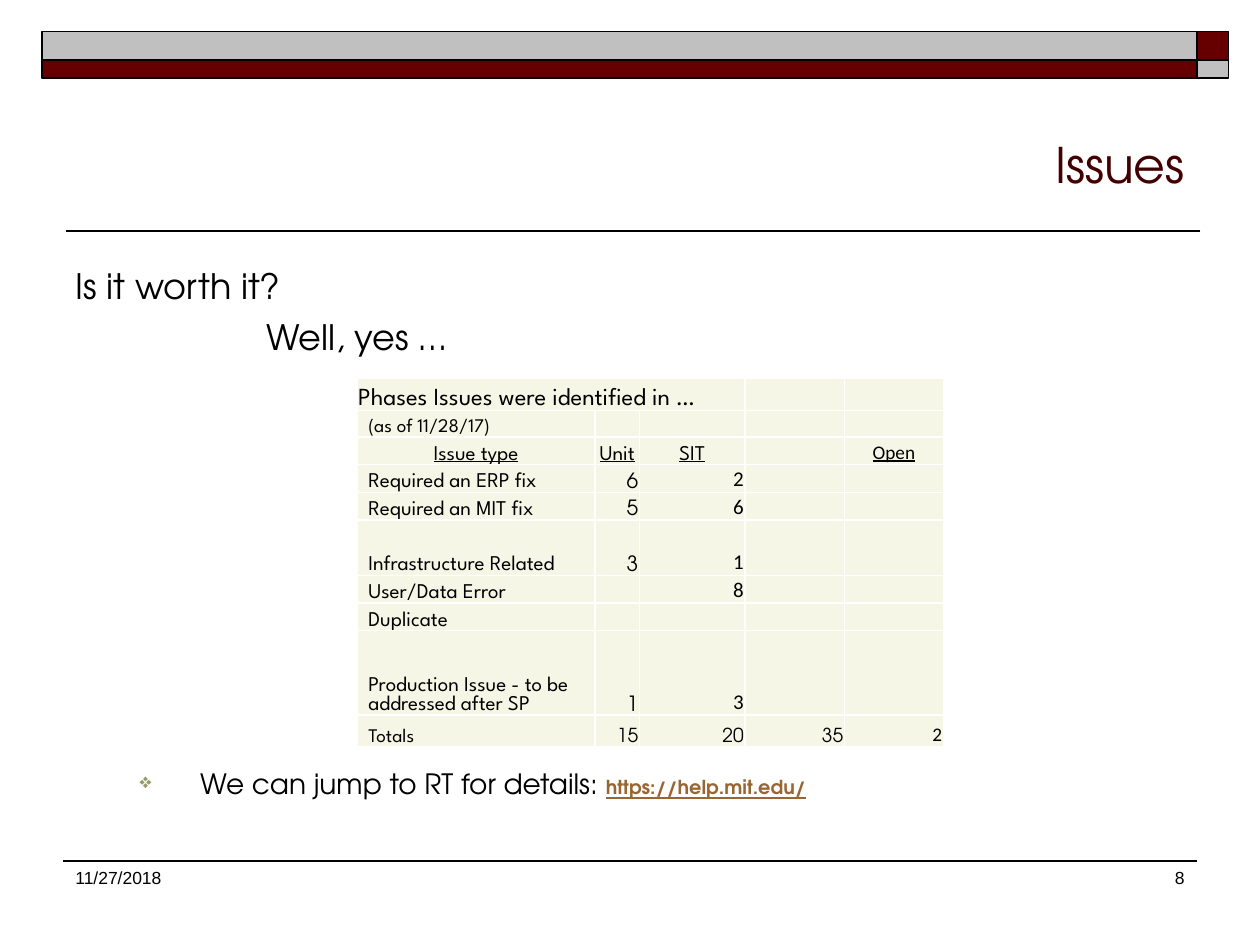
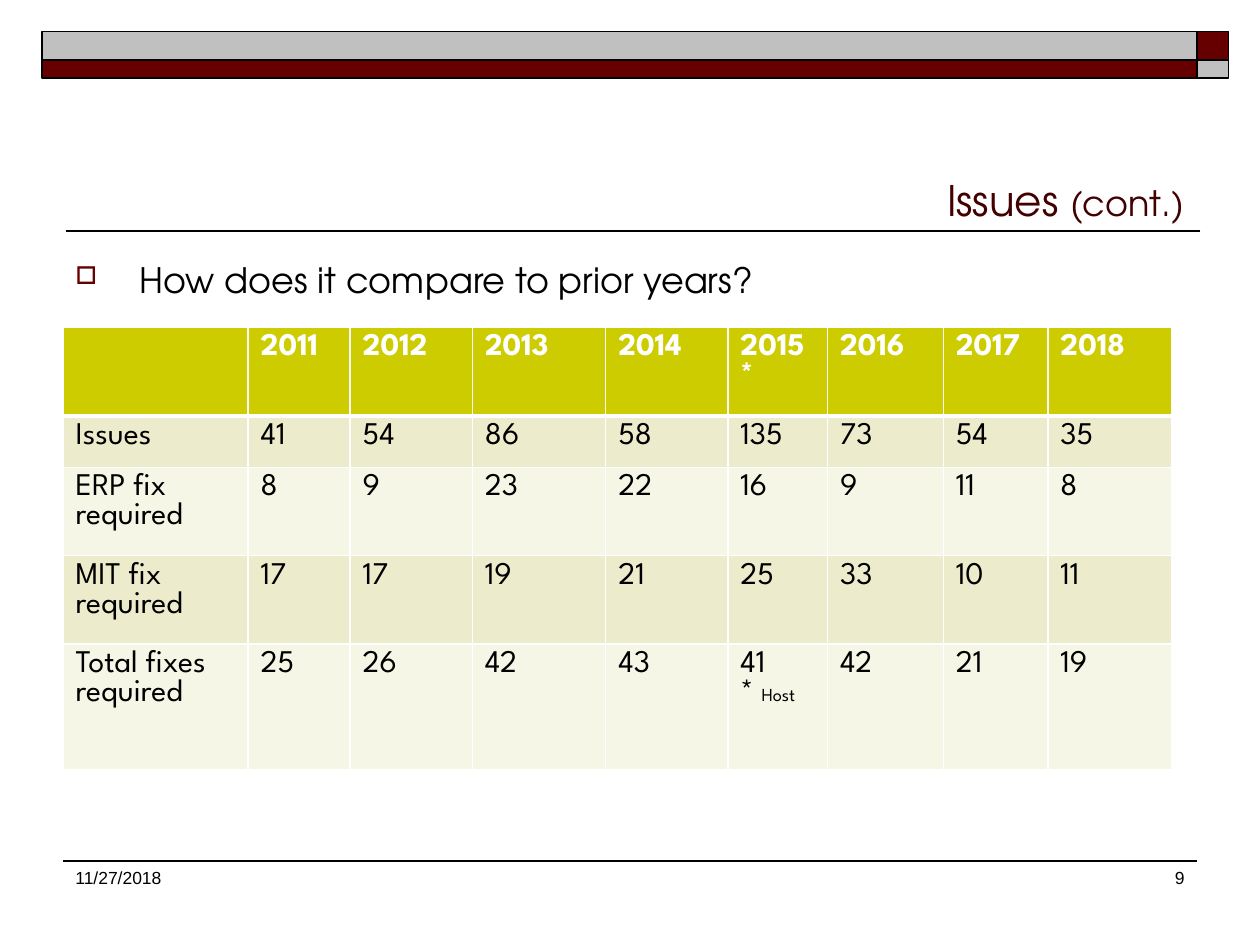
from lxml import etree
from pptx import Presentation
from pptx import util as u
from pptx.dml import color as dml
from pptx.enum import shapes, text
from pptx.oxml import ns

MAROON, SILVER, BLACK, WHITE = "660000", "C0C0C0", "000000", "FFFFFF"
TITLE_INK, LINK_INK, BULLET_INK = "420000", "996633", "999966"
OLIVE, BEIGE, CREAM = "CCCC00", "ECECCC", "F6F6E7"
ADVENTOR, SPARTAN, CALIBRI = "TeX Gyre Adventor", "League Spartan", "Calibri"
LEFT, CENTER, RIGHT = text.PP_ALIGN.LEFT, text.PP_ALIGN.CENTER, text.PP_ALIGN.RIGHT
TOP, BOTTOM = text.MSO_ANCHOR.TOP, text.MSO_ANCHOR.BOTTOM


def rgb(code):
    return dml.RGBColor.from_string(code)


def write(paragraph, words, font=ADVENTOR, size=20, ink=BLACK, bold=False,
          underline=False, align=LEFT, margin=0, indent=0, before=0,
          spacing=None, bullet=None):
    """Add a run; bullet is (character, colour, percent of text size)."""
    if bullet:
        character, bullet_ink, percent = bullet
        properties = paragraph._p.get_or_add_pPr()
        properties.set("marL", str(u.Pt(margin)))
        properties.set("indent", str(u.Pt(indent)))
        bullet_color = etree.SubElement(properties, ns.qn("a:buClr"))
        etree.SubElement(bullet_color, ns.qn("a:srgbClr"), val=bullet_ink)
        etree.SubElement(properties, ns.qn("a:buSzPct"), val=str(percent * 1000))
        etree.SubElement(properties, ns.qn("a:buChar"), char=character)
    elif margin:
        paragraph._p.get_or_add_pPr().set("marL", str(u.Pt(margin)))
    paragraph.alignment = align
    if before:
        paragraph.space_before = u.Pt(before)
    if spacing:
        paragraph.line_spacing = spacing
    run = paragraph.add_run()
    run.text = words
    run.font.name, run.font.size = font, u.Pt(size)
    run.font.bold, run.font.underline = bold, underline
    run.font.color.rgb = rgb(ink)


presentation = Presentation()
presentation.slide_width, presentation.slide_height = u.Pt(720), u.Pt(540)

# Shared frame: bands, rules, footer, and empty title and body boxes
bands = [(684, 18, 18, 16.5, MAROON), (24, 18, 660, 16.5, SILVER),
         (24, 34.5, 660, 10, MAROON), (684, 34.5, 18, 10, SILVER)]
rules = [(686, 38, 132, 1), (36, 684, 492, 0.75)]
layouts = [("8", 72, 147.6), ("9", 90, 144)]
slides, titles, bodies = [], [], []
for number, title_height, body_top in layouts:
    slide = presentation.slides.add_slide(presentation.slide_layouts[6])
    slides.append(slide)
    for x1, x2, y, width in rules:
        rule = slide.shapes.add_connector(shapes.MSO_CONNECTOR.STRAIGHT,
                                          u.Pt(x1), u.Pt(y), u.Pt(x2), u.Pt(y))
        rule.line.color.rgb, rule.line.width = rgb(BLACK), u.Pt(width)
        etree.SubElement(rule._element.spPr, ns.qn("a:effectLst"))
    for left, top, width, height, fill in bands:
        band = slide.shapes.add_shape(shapes.MSO_SHAPE.RECTANGLE, u.Pt(left),
                                      u.Pt(top), u.Pt(width), u.Pt(height))
        band.shadow.inherit = False
        band.fill.solid()
        band.fill.fore_color.rgb = rgb(fill)
        band.line.color.rgb, band.line.width = rgb(BLACK), u.Pt(1)
    boxes = [(36, 42, 648, title_height, BOTTOM), (36, body_top, 648, 338.4, TOP),
             (36, 492, 132, 36, TOP), (534, 492, 150, 36, TOP)]
    frames = []
    for left, top, width, height, anchor in boxes:
        frame = slide.shapes.add_textbox(u.Pt(left), u.Pt(top),
                                         u.Pt(width), u.Pt(height)).text_frame
        frame.word_wrap, frame.vertical_anchor = True, anchor
        frames.append(frame)
    title, body, date, page = frames
    titles.append(title.paragraphs[0])
    bodies.append(body)
    write(date.paragraphs[0], "11/27/2018", font="Arial", size=10)
    write(page.paragraphs[0], number, font="Arial", size=10, align=RIGHT)

# Titles and body text
write(titles[0], "Issues", size=28, ink=TITLE_INK, align=RIGHT)
write(titles[1], "Issues ", size=24, ink=TITLE_INK, align=RIGHT)
write(titles[1], "(cont.)", size=20, ink=TITLE_INK, align=RIGHT)

write(bodies[0].paragraphs[0], "Is it worth it?")
write(bodies[0].add_paragraph(), "Well, yes …", margin=109, before=5)
details = bodies[0].add_paragraph()
write(details, "We can jump to RT for details: ", size=16, margin=71.3, indent=-34.6,
      before=236, spacing=0.9, bullet=("❖", BULLET_INK, 75))
write(details, "https://help.mit.edu/", size=11, ink=LINK_INK, bold=True, underline=True)
write(bodies[1].paragraphs[0], "How does it compare to prior years?",
      margin=36.7, indent=-36.7, bullet=("□", MAROON, 70))

# Tables: values, column widths, row heights
phases = [
    ["Phases Issues were identified in …", "", "", "", ""],
    ["(as of 11/28/17)", "", "", "", ""],
    ["Issue type", "Unit", "SIT", "", "Open"],
    ["Required an ERP fix", "6", "2", "", ""],
    ["Required an MIT fix", "5", "6", "", ""],
    ["Infrastructure Related", "3", "1", "", ""],
    ["User/Data Error", "", "8", "", ""],
    ["Duplicate", "", "", "", ""],
    ["Production Issue - to be addressed after SP", "1", "3", "", ""],
    ["Totals", "15", "20", "35", "2"],
]
years = [
    ["", "2011", "2012", "2013", "2014", "2015*", "2016", "2017", "2018"],
    ["Issues", "41", "54", "86", "58", "135", "73", "54", "35"],
    ["ERP fix required", "8", "9", "23", "22", "16", "9", "11", "8"],
    ["MIT fix required", "17", "17", "19", "21", "25", "33", "10", "11"],
    ["Total fixes required", "25", "26", "42", "43", "41", "42", "21", "19"],
]
grids = [
    (phases, 204, 216, [136, 25.4, 60.3, 56.9, 56.5],
     [18.7, 15.1, 15.8, 15.8, 15.8, 31.7, 15.8, 15.8, 48.2, 18]),
    (years, 36, 187.2, [105.8, 58.3, 69.8, 76.3, 69.8, 56.9, 66.2, 59.8, 70.6],
     [29.5, 29.5, 50.4, 50.4, 72]),
]
tables = []
for slide, (values, left, top, widths, heights) in zip(slides, grids):
    table = slide.shapes.add_table(len(heights), len(widths), u.Pt(left), u.Pt(top),
                                   u.Pt(sum(widths)), u.Pt(sum(heights))).table
    tables.append(table)
    for column, width in zip(table.columns, widths):
        column.width = u.Pt(width)
    for row, height in zip(table.rows, heights):
        row.height = u.Pt(height)
    by_year = values is years
    table.first_row = table.horz_banding = by_year
    for r, row_values in enumerate(values):
        for c, value in enumerate(row_values):
            cell = table.cell(r, c)
            for side in ("lnL", "lnR", "lnT", "lnB"):
                heavy = by_year and (r, side) in ((0, "lnB"), (1, "lnT"))
                border = etree.SubElement(cell._tc.get_or_add_tcPr(), ns.qn("a:" + side),
                                          w=str(u.Pt(3 if heavy else 1)))
                border_fill = etree.SubElement(border, ns.qn("a:solidFill"))
                etree.SubElement(border_fill, ns.qn("a:srgbClr"), val=WHITE)
            cell.fill.solid()
            paragraph = cell.text_frame.paragraphs[0]
            if by_year:
                cell.fill.fore_color.rgb = rgb(OLIVE if r == 0 else BEIGE if r % 2 else CREAM)
                look = dict(font=SPARTAN, size=18, bold=r == 0, ink=BLACK if r else WHITE)
            else:
                cell.fill.fore_color.rgb = rgb(CREAM)
                cell.vertical_anchor = BOTTOM
                cell.margin_left = u.Pt(6.5 if c == 0 and r not in (0, 2) else 0.7)
                cell.margin_right = cell.margin_top = u.Pt(0.7)
                cell.margin_bottom = 0
                if r == 2:
                    look = dict(font=CALIBRI if c == 4 else SPARTAN,
                                size=11 if c == 4 else 12, underline=True, align=CENTER)
                elif c == 0:
                    look = dict(font=SPARTAN, size={0: 14, 1: 11, 9: 11}.get(r, 12))
                else:
                    plain = c == 4 or (c == 2 and r < 9)
                    look = dict(font=CALIBRI if plain else ADVENTOR,
                                size=11 if r == 9 else 12, align=RIGHT)
            if value:
                write(paragraph, value, **look)
            else:
                etree.SubElement(paragraph._p, ns.qn("a:endParaRPr"), sz="1000")

phase_table, year_table = tables
phase_table.cell(0, 0).merge(phase_table.cell(0, 2))
footnote = year_table.cell(4, 5).text_frame.add_paragraph()
write(footnote, "* ", font=SPARTAN, size=18)
write(footnote, "Host", font=SPARTAN, size=10.5)

presentation.save("out.pptx")
